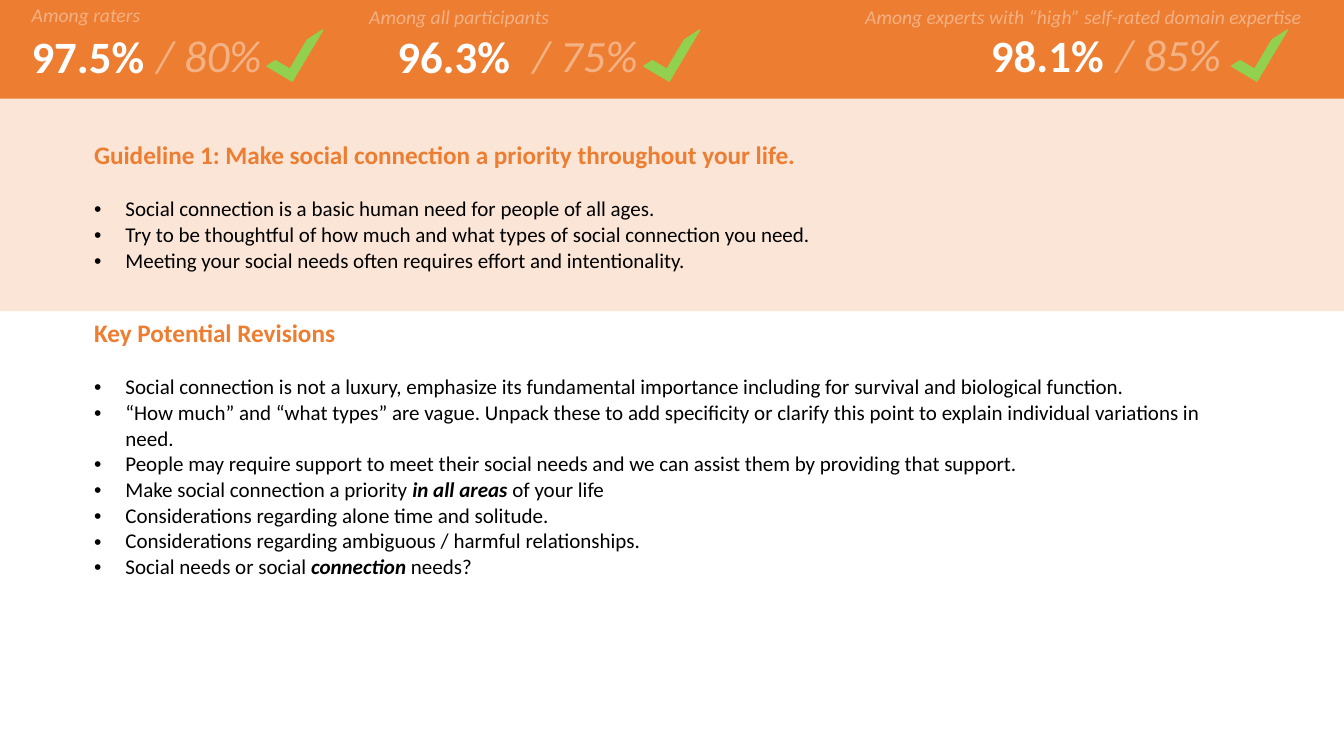
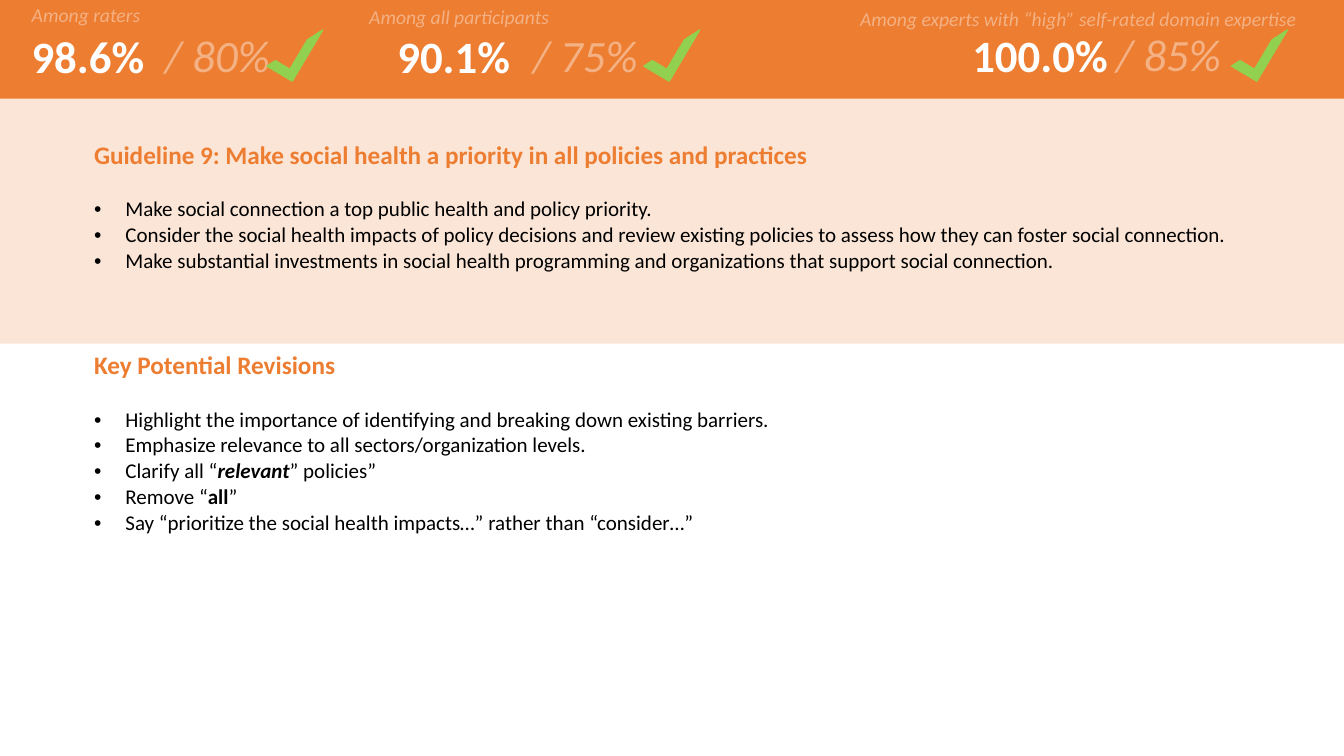
from dataclasses import dataclass, replace
from typing import NamedTuple

from lxml import etree
from pptx import Presentation
from pptx import util as u
from pptx.dml.color import RGBColor
from pptx.enum import shapes, text
from pptx.oxml.ns import qn


@dataclass(frozen=True)
class Theme:
    font: str = "Calibri"
    accent: RGBColor = RGBColor(0xED, 0x7D, 0x31)
    pale: RGBColor = RGBColor(0xFB, 0xE5, 0xD6)
    muted: RGBColor = RGBColor(0xF4, 0xB1, 0x83)
    check: RGBColor = RGBColor(0x92, 0xD0, 0x50)
    light: RGBColor = RGBColor(0xFF, 0xFF, 0xFF)
    body: RGBColor = RGBColor(0, 0, 0)
    score_size: float = 32
    heading_size: float = 18
    bullet_size: float = 15
    caption_size: float = 14
    heading_gap: float = 18.3


class Box(NamedTuple):
    """Place and size in centimetres."""
    left: float
    top: float
    width: float
    height: float

    def lengths(self) -> list[u.Cm]:
        return [u.Cm(value) for value in self]


class Run(NamedTuple):
    text: str
    bold: bool = False
    italic: bool = False


class Section(NamedTuple):
    heading: str
    bullets: list[tuple[Run, ...]]


@dataclass(frozen=True)
class Indicator:
    caption: str
    target: str
    caption_box: Box
    rate_box: Box
    target_box: Box
    check_left: float


@dataclass(frozen=True)
class GuidelineSlide:
    rates: tuple[str, ...]
    indicators: tuple[Indicator, ...]
    panel_height: float
    guideline: Section
    revisions: Section


THEME = Theme()
SLIDE_WIDTH, SLIDE_HEIGHT = 33.87, 19.05
BAND_HEIGHT = 2.49
PANEL_TOP = 2.46
GUIDELINE_TOP = 3.51
REVISIONS_GAP = 0.15
TABLE_LEFT, TABLE_WIDTH, ROW_HEIGHT = 2.34, 29.21, 2.6
CELL_MARGIN = 0.03
BULLET_INDENT = 0.79
CHECK_TOP, CHECK_WIDTH, CHECK_HEIGHT = 0.46, 0.74, 1.5
CHECK_ROTATION = 210.8
CHECK_ADJUSTMENTS = (0.306, 0.273)
PLAIN_TABLE_STYLE = "{2D5ABB26-0587-4C30-8999-92F81FD0307C}"

RATERS = Indicator(
    "Among raters", "/ 80%",
    Box(0.53, -0.05, 3.28, 0.86), Box(0.53, 0.61, 3.63, 1.63),
    Box(3.68, 0.58, 3.18, 1.63), 7.06)
PARTICIPANTS = Indicator(
    "Among all participants", "/ 75%",
    Box(9.02, 0, 5.11, 0.86), Box(9.75, 0.61, 3.63, 1.63),
    Box(13.16, 0.58, 3.18, 1.63), 16.56)
EXPERTS = Indicator(
    "Among experts with “high” self-rated domain expertise", "/ 85%",
    Box(21.36, 0, 11.89, 0.86), Box(24.71, 0.58, 3.63, 1.63),
    Box(27.86, 0.56, 3.18, 1.63), 31.37)


def plain(*lines: str) -> list[tuple[Run, ...]]:
    return [(Run(line),) for line in lines]


SLIDES = [
    GuidelineSlide(
        ("97.5%", "96.3%", "98.1%"),
        (RATERS, PARTICIPANTS, EXPERTS),
        5.38,
        Section("Guideline 1: Make social connection a priority throughout your life.", plain(
            "Social connection is a basic human need for people of all ages.",
            "Try to be thoughtful of how much and what types of social connection you need.",
            "Meeting your social needs often requires effort and intentionality.",
        )),
        Section("Key Potential Revisions", [
            *plain(
                "Social connection is not a luxury, emphasize its fundamental importance "
                "including for survival and biological function.",
                "“How much” and “what types” are vague. Unpack these to add specificity or "
                "clarify this point to explain individual variations in need.",
                "People may require support to meet their social needs and we can assist them "
                "by providing that support.",
            ),
            (Run("Make social connection a priority "), Run("in all areas ", True, True),
             Run("of your life")),
            *plain(
                "Considerations regarding alone time and solitude.",
                "Considerations regarding ambiguous / harmful relationships.",
            ),
            (Run("Social needs or social "), Run("connection", True, True), Run(" needs?")),
        ]),
    ),
    GuidelineSlide(
        ("98.6%", "90.1%", "100.0%"),
        (
            replace(RATERS, target_box=RATERS.target_box._replace(left=3.89)),
            PARTICIPANTS,
            replace(EXPERTS,
                    caption_box=EXPERTS.caption_box._replace(left=21.23, top=0.05),
                    rate_box=EXPERTS.rate_box._replace(left=24.23, width=4.22)),
        ),
        6.2,
        Section("Guideline 9: Make social health a priority in all policies and practices", plain(
            "Make social connection a top public health and policy priority.",
            "Consider the social health impacts of policy decisions and review existing "
            "policies to assess how they can foster social connection.",
            "Make substantial investments in social health programming and organizations "
            "that support social connection.",
        )),
        Section("Key Potential Revisions", [
            *plain(
                "Highlight the importance of identifying and breaking down existing barriers.",
                "Emphasize relevance to all sectors/organization levels.",
            ),
            (Run("Clarify all “"), Run("relevant", True, True), Run("” policies”")),
            (Run("Remove “"), Run("all", True), Run("”")),
            *plain("Say “prioritize the social health impacts…” rather than “consider…”"),
        ]),
    ),
]


def add_run(paragraph, content: str, *, size: float, color: RGBColor,
            bold: bool = False, italic: bool = False) -> None:
    run = paragraph.add_run()
    run.text = content
    font = run.font
    font.name, font.size = THEME.font, u.Pt(size)
    font.bold, font.italic = bold, italic
    font.color.rgb = color


def add_label(slide, box: Box, content: str, **run_format) -> None:
    """Add one centred line that does not wrap."""
    frame = slide.shapes.add_textbox(*box.lengths()).text_frame
    frame.word_wrap = False
    frame.auto_size = text.MSO_AUTO_SIZE.SHAPE_TO_FIT_TEXT
    paragraph = frame.paragraphs[0]
    paragraph.alignment = text.PP_ALIGN.CENTER
    add_run(paragraph, content, **run_format)


def add_filled_shape(slide, kind: shapes.MSO_SHAPE, box: Box, color: RGBColor):
    shape = slide.shapes.add_shape(kind, *box.lengths())
    shape.shadow.inherit = False
    shape.fill.solid()
    shape.fill.fore_color.rgb = color
    shape.line.fill.background()
    return shape


def add_check(slide, left: float) -> None:
    box = Box(left, CHECK_TOP, CHECK_WIDTH, CHECK_HEIGHT)
    check = add_filled_shape(slide, shapes.MSO_SHAPE.HALF_FRAME, box, THEME.check)
    check.rotation = CHECK_ROTATION
    for index, value in enumerate(CHECK_ADJUSTMENTS):
        check.adjustments[index] = value
    check.line.color.rgb = THEME.check
    check.line.width = u.Pt(1)


def add_indicator(slide, indicator: Indicator, rate: str) -> None:
    add_label(slide, indicator.rate_box, f"{rate} ",
              size=THEME.score_size, color=THEME.light, bold=True)
    add_label(slide, indicator.caption_box, indicator.caption,
              size=THEME.caption_size, color=THEME.muted, italic=True)
    add_label(slide, indicator.target_box, indicator.target,
              size=THEME.score_size, color=THEME.muted, italic=True)
    add_check(slide, indicator.check_left)


def set_bullet(paragraph) -> None:
    properties = paragraph._p.get_or_add_pPr()
    indent = u.Cm(BULLET_INDENT)
    properties.set("marL", str(indent))
    properties.set("indent", str(-indent))
    etree.SubElement(properties, qn("a:buFont")).set("typeface", "Arial")
    etree.SubElement(properties, qn("a:buChar")).set("char", "•")


def add_section(slide, section: Section, top: float, fill: RGBColor | None = None) -> None:
    """Add a one-cell table with a heading above its bullets."""
    box = Box(TABLE_LEFT, top, TABLE_WIDTH, ROW_HEIGHT)
    table = slide.shapes.add_table(1, 1, *box.lengths()).table
    table.first_row = table.horz_banding = False
    table._tbl.tblPr.find(qn("a:tableStyleId")).text = PLAIN_TABLE_STYLE
    cell = table.cell(0, 0)
    cell.vertical_anchor = text.MSO_ANCHOR.MIDDLE
    cell.margin_left = cell.margin_right = u.Cm(CELL_MARGIN)
    cell.margin_top = cell.margin_bottom = u.Cm(CELL_MARGIN)
    if fill is None:
        cell.fill.background()
    else:
        cell.fill.solid()
        cell.fill.fore_color.rgb = fill

    heading = cell.text_frame.paragraphs[0]
    heading.space_after = u.Pt(THEME.heading_gap)
    add_run(heading, section.heading, size=THEME.heading_size, color=THEME.accent, bold=True)
    for bullet in section.bullets:
        paragraph = cell.text_frame.add_paragraph()
        set_bullet(paragraph)
        for run in bullet:
            add_run(paragraph, run.text, size=THEME.bullet_size, color=THEME.body,
                    bold=run.bold, italic=run.italic)


def add_guideline_slide(presentation, content: GuidelineSlide) -> None:
    slide = presentation.slides.add_slide(presentation.slide_layouts[6])
    rectangle = shapes.MSO_SHAPE.RECTANGLE
    panel = Box(0, PANEL_TOP, SLIDE_WIDTH, content.panel_height)
    add_filled_shape(slide, rectangle, panel, THEME.pale)
    add_section(slide, content.guideline, GUIDELINE_TOP, THEME.pale)
    add_filled_shape(slide, rectangle, Box(0, 0, SLIDE_WIDTH, BAND_HEIGHT), THEME.accent)
    for indicator, rate in zip(content.indicators, content.rates):
        add_indicator(slide, indicator, rate)
    add_section(slide, content.revisions, panel.top + panel.height + REVISIONS_GAP)


def main() -> None:
    presentation = Presentation()
    presentation.slide_width = u.Cm(SLIDE_WIDTH)
    presentation.slide_height = u.Cm(SLIDE_HEIGHT)
    for content in SLIDES:
        add_guideline_slide(presentation, content)
    presentation.save("out.pptx")


if __name__ == "__main__":
    main()
